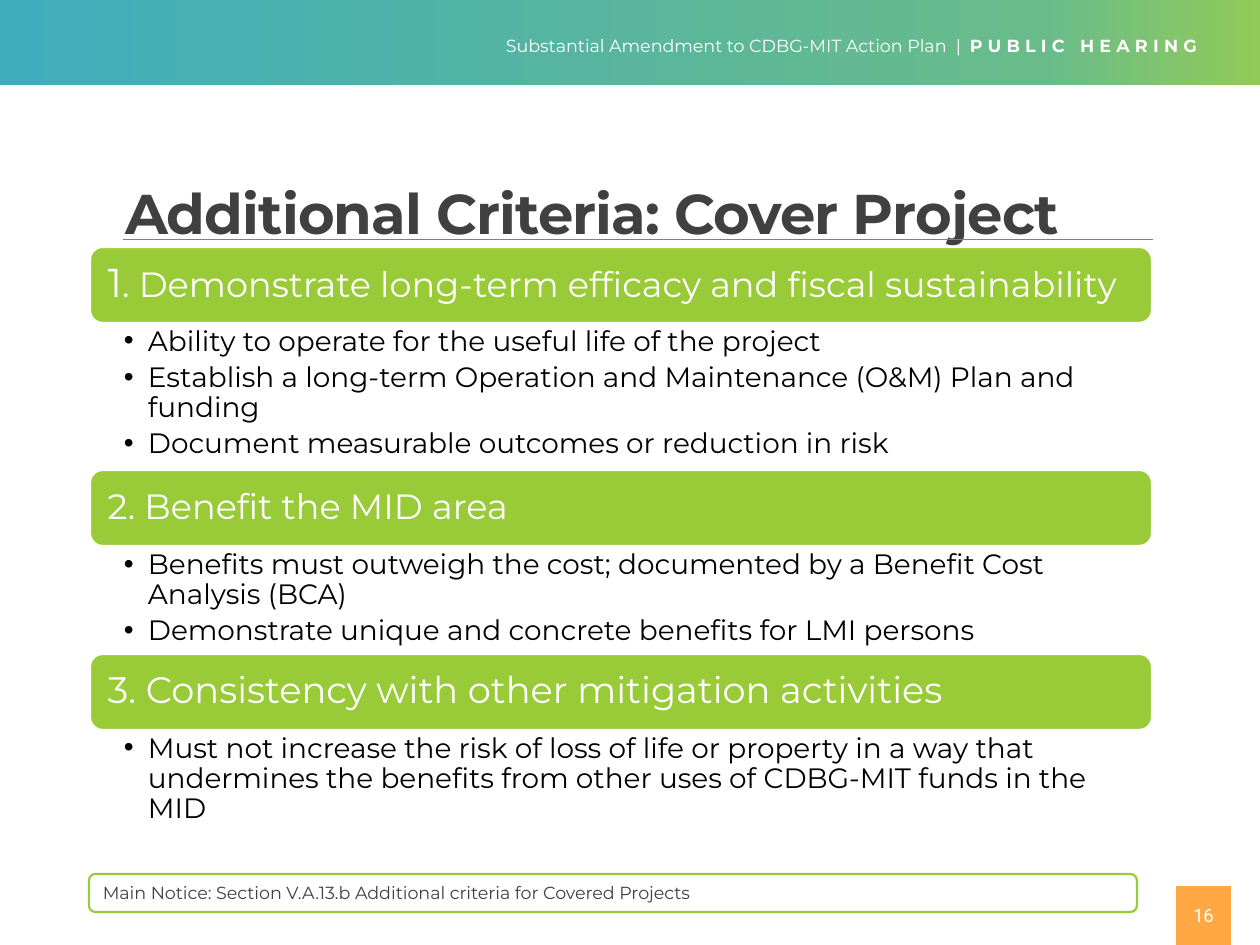
from copy import deepcopy

from lxml import etree
from pptx import Presentation
from pptx.dml.color import RGBColor
from pptx.enum.shapes import MSO_CONNECTOR, MSO_SHAPE
from pptx.enum.text import MSO_ANCHOR, MSO_AUTO_SIZE, PP_ALIGN
from pptx.oxml.ns import qn
from pptx.util import Emu, Pt

RECT, ROUNDED = MSO_SHAPE.RECTANGLE, MSO_SHAPE.ROUNDED_RECTANGLE
STRAIGHT = MSO_CONNECTOR.STRAIGHT
LEFT, CENTER = PP_ALIGN.LEFT, PP_ALIGN.CENTER
TOP, MIDDLE = MSO_ANCHOR.TOP, MSO_ANCHOR.MIDDLE
FIXED = MSO_AUTO_SIZE.NONE

EMU_PER_PX = 914400 / 126
FONT, NUMBER_FONT = "Montserrat", "Roboto"

WHITE = RGBColor(0xFF, 0xFF, 0xFF)
BLACK = RGBColor(0x00, 0x00, 0x00)
CHARCOAL = RGBColor(0x40, 0x40, 0x40)
GRAY = RGBColor(0x80, 0x80, 0x80)
GREEN = RGBColor(0x99, 0xCB, 0x38)
ORANGE = RGBColor(0xFF, 0xA8, 0x44)
HEADER_STOPS = [
    (0, RGBColor(0x3F, 0xAD, 0xBB)),
    (0.83, RGBColor(0x69, 0xBC, 0x8A)),
    (1, RGBColor(0x92, 0xCA, 0x58)),
]

BAND_LEFT, BAND_WIDTH, BAND_HEIGHT = 90, 1062, 76
BULLET_INDENT = 24

# Band top, heading runs (text, size), list height, list items
CRITERIA = [
    (247, [("1", 23), (". Demonstrate long-term efficacy and fiscal sustainability", 20)], 146,
     ["Ability to operate for the useful life of the project",
      "Establish a long-term Operation and Maintenance (O&M) Plan and funding",
      "Document measurable outcomes or reduction in risk"]),
    (470, [("2. Benefit the MID area", 20)], 108,
     ["Benefits must outweigh the cost; documented by a Benefit Cost Analysis (BCA)",
      "Demonstrate unique and concrete benefits for LMI persons"]),
    (654, [("3. Consistency with other mitigation activities", 21)], 102,
     ["Must not increase the risk of loss of life or property in a way that "
      "undermines the benefits from other uses of CDBG-MIT funds in the MID"]),
]


def px(length):
    return Emu(round(length * EMU_PER_PX))


def place(shape, left, top, width, height):
    shape.left, shape.top = px(left), px(top)
    shape.width, shape.height = px(width), px(height)


def style_font(font, color, size=None, bold=False, name=FONT):
    font.name, font.bold = name, bold
    font.color.rgb = color
    if size:
        font.size = Pt(size)


def set_frame(frame, anchor, left=12, top=6, right=12, bottom=6):
    frame.word_wrap = True
    frame.auto_size = FIXED
    frame.vertical_anchor = anchor
    frame.margin_left, frame.margin_top = px(left), px(top)
    frame.margin_right, frame.margin_bottom = px(right), px(bottom)


def set_tracking(run, points):
    run.font._element.set("spc", str(round(points * 100)))


def add_box(slide, kind, bounds, fill, line=None):
    box = slide.shapes.add_shape(kind, *map(px, bounds))
    box.shadow.inherit = False
    box.fill.solid()
    box.fill.fore_color.rgb = fill
    if line is None:
        box.line.fill.background()
    else:
        box.line.color.rgb = line
        box.line.width = Pt(1.25)
    return box


def write_line(frame, text, size, color, align=LEFT, name=FONT):
    paragraph = frame.paragraphs[0]
    paragraph.alignment = align
    paragraph.add_run().text = text
    style_font(paragraph.font, color, size, name=name)


def add_header(slide):
    banner = add_box(slide, RECT, (0, 0, 1260, 85), WHITE)
    banner.fill.gradient()
    banner.fill.gradient_angle = 0
    stops = banner.fill.gradient_stops
    first_stop = stops[0]._gs
    first_stop.addnext(deepcopy(first_stop))
    for stop, (position, color) in zip(banner.fill.gradient_stops, HEADER_STOPS):
        stop.position = position
        stop.color.rgb = color

    caption = slide.shapes.add_textbox(*map(px, (494, 29, 755, 34))).text_frame
    set_frame(caption, TOP)
    paragraph = caption.paragraphs[0]
    for text, bold in [("Substantial Amendment to CDBG-MIT Action Plan  |  ", False),
                       ("PUBLIC HEARING", True)]:
        run = paragraph.add_run()
        run.text = text
        style_font(run.font, WHITE, 10, bold)
    set_tracking(run, 3)


def add_title(slide, text):
    rule = slide.shapes.add_connector(STRAIGHT, px(123), px(239), px(1153), px(239))
    rule.line.color.rgb = GRAY
    rule.line.width = Pt(0.5)
    etree.SubElement(rule._element.spPr, qn("a:effectLst"))

    title = slide.shapes.title
    place(title, 113, 178, 1062, 78)
    set_frame(title.text_frame, MIDDLE)
    paragraph = title.text_frame.paragraphs[0]
    paragraph.alignment = LEFT
    paragraph.line_spacing = 0.85
    run = paragraph.add_run()
    run.text = text
    style_font(paragraph.font, CHARCOAL, 32, bold=True)
    set_tracking(run, -0.5)


def add_band(slide, top, heading):
    band = add_box(slide, ROUNDED, (BAND_LEFT, top, BAND_WIDTH, BAND_HEIGHT), GREEN, WHITE)
    set_frame(band.text_frame, MIDDLE, left=14)
    paragraph = band.text_frame.paragraphs[0]
    paragraph.alignment = LEFT
    paragraph.line_spacing = 0.9
    for text, size in heading:
        run = paragraph.add_run()
        run.text = text
        run.font.size = Pt(size)
    style_font(paragraph.font, WHITE)


def fill_list(body, top, height, items):
    place(body, BAND_LEFT, top, BAND_WIDTH, height)
    frame = body.text_frame
    set_frame(frame, TOP, left=34, top=4, right=20, bottom=4)
    for index, item in enumerate(items):
        paragraph = frame.add_paragraph() if index else frame.paragraphs[0]
        paragraph.add_run().text = item
        paragraph.alignment = LEFT
        paragraph.line_spacing = 0.9
        paragraph.space_before = Pt(0)
        paragraph.space_after = Pt(3.4)
        properties = paragraph._p.get_or_add_pPr()
        properties.set("marL", str(px(BULLET_INDENT)))
        properties.set("indent", str(-px(BULLET_INDENT)))
        etree.SubElement(properties, qn("a:buChar"), char="•")
        style_font(paragraph.font, BLACK, 16)


def add_footer(slide):
    note = add_box(slide, ROUNDED, (89, 874, 1048, 38), WHITE, GREEN)
    set_frame(note.text_frame, MIDDLE)
    write_line(note.text_frame, "Main Notice: Section V.A.13.b Additional criteria for Covered Projects",
               10, CHARCOAL)

    page_tile = add_box(slide, RECT, (1176, 886, 55, 59), ORANGE)
    set_frame(page_tile.text_frame, MIDDLE)
    write_line(page_tile.text_frame, "16", 10.5, WHITE, CENTER, NUMBER_FONT)


def main():
    presentation = Presentation()
    presentation.slide_width, presentation.slide_height = px(1260), px(945)
    comparison_layout = presentation.slide_layouts[4]
    slide = presentation.slides.add_slide(comparison_layout)

    add_header(slide)
    add_title(slide, "Additional Criteria: Cover Project")

    # Criteria bands, each followed by its list
    bodies = list(slide.placeholders)[1:]
    for body, (top, heading, height, items) in zip(bodies, CRITERIA):
        add_band(slide, top, heading)
        fill_list(body, top + BAND_HEIGHT, height, items)
    for unused in bodies[len(CRITERIA):]:
        unused._element.getparent().remove(unused._element)

    add_footer(slide)
    presentation.save("out.pptx")


if __name__ == "__main__":
    main()
